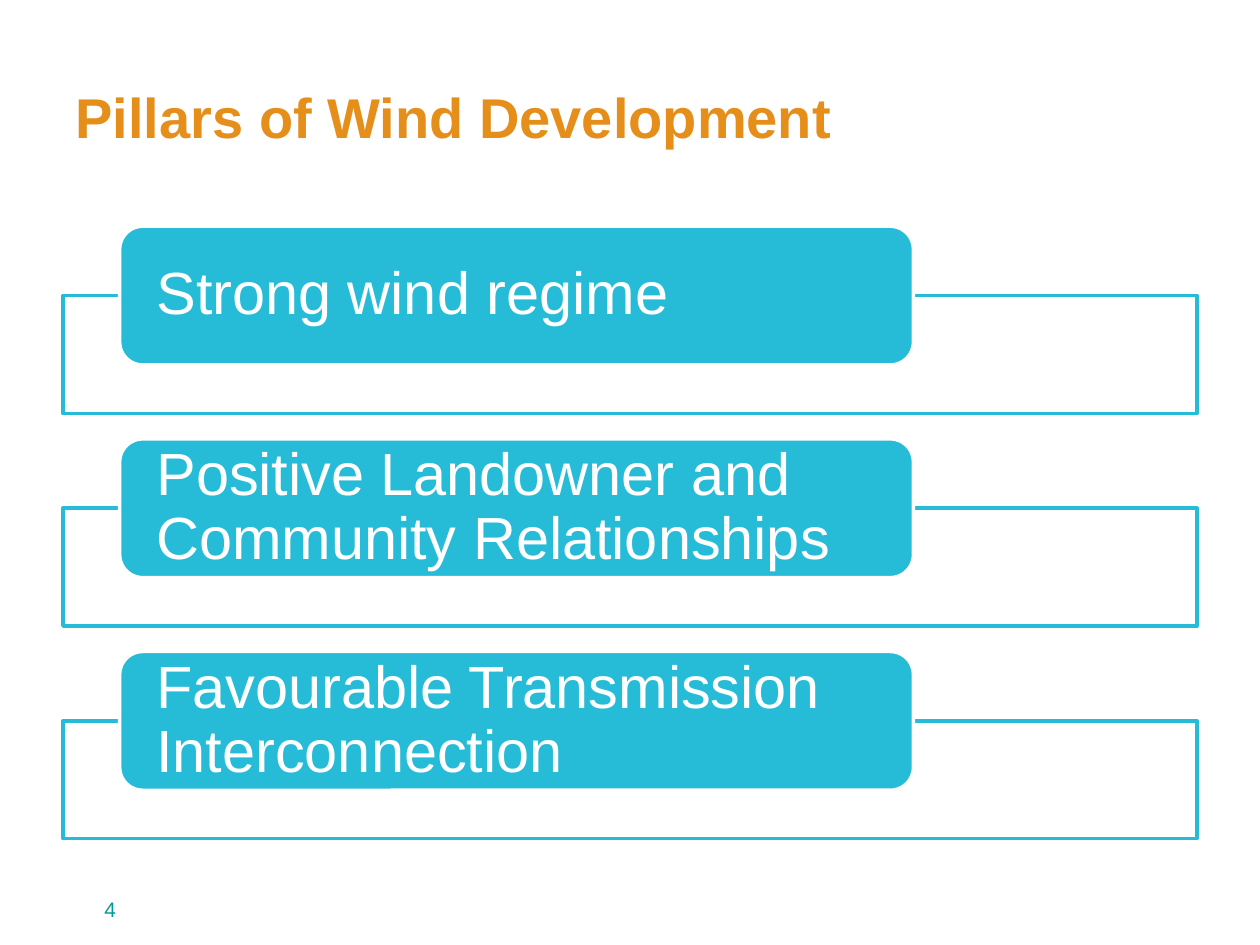
from dataclasses import dataclass

from lxml import etree
from pptx import Presentation
from pptx.dml.color import RGBColor
from pptx.enum import shapes, text
from pptx.oxml import ns
from pptx.util import Pt


@dataclass(frozen=True)
class Theme:
    font: str = "Arial"
    title: str = "E58E1A"
    accent: str = "26BCD7"
    light: str = "FFFFFF"
    number: str = "009999"
    title_size: int = 32
    pillar_size: int = 34
    number_size: int = 12
    line: int = 2


THEME = Theme()
PILLARS = [
    "Strong wind regime",
    "Positive Landowner and Community Relationships",
    "Favourable Transmission Interconnection",
]


def add_run(p, words, size, color, bold=False):
    r = p.add_run()
    r.text = words
    r.font.name = THEME.font
    r.font.size = Pt(size)
    r.font.bold = bold
    r.font.color.rgb = RGBColor.from_string(color)


def add_box(s, kind, box, fill, line):
    sp = s.shapes.add_shape(kind, *map(Pt, box))
    sp.shadow.inherit = False
    sp.fill.solid()
    sp.fill.fore_color.rgb = RGBColor.from_string(fill)
    sp.line.color.rgb = RGBColor.from_string(line)
    sp.line.width = Pt(THEME.line)
    return sp


def add_title(s, box, words):
    sp = s.shapes.title
    sp.left, sp.top, sp.width, sp.height = map(Pt, box)
    tf = sp.text_frame
    tf.vertical_anchor = text.MSO_ANCHOR.MIDDLE
    p = tf.paragraphs[0]
    p.alignment = text.PP_ALIGN.LEFT
    add_run(p, words, THEME.title_size, THEME.title, bold=True)


def add_pillar(s, box, words):
    left, top, width, height = box
    label_height = 79.3
    frame_top = label_height / 2
    frame = add_box(s, shapes.MSO_SHAPE.RECTANGLE,
                    (left, top + frame_top, width, height - frame_top),
                    THEME.light, THEME.accent)
    color = frame.fill._xPr.find(".//" + ns.qn("a:srgbClr"))
    etree.SubElement(color, ns.qn("a:alpha"), val="90000")

    label = add_box(s, shapes.MSO_SHAPE.ROUNDED_RECTANGLE,
                    (left + width * 0.05, top, width * 0.7, label_height),
                    THEME.accent, THEME.light)
    tf = label.text_frame
    tf.word_wrap = True
    tf.vertical_anchor = text.MSO_ANCHOR.MIDDLE
    tf.margin_left = tf.margin_right = Pt(17.15)
    tf.margin_top = tf.margin_bottom = 0
    p = tf.paragraphs[0]
    p.alignment = text.PP_ALIGN.LEFT
    p.line_spacing = 0.9
    add_run(p, words, THEME.pillar_size, THEME.light)


def add_pillars(s, box, items):
    left, top, width, height = box
    gap = 14.5
    item_height = (height - gap * (len(items) - 1)) / len(items)
    for i, words in enumerate(items):
        y = top + i * (item_height + gap)
        add_pillar(s, (left, y, width, item_height), words)


def add_number(s, box, words):
    tf = s.shapes.add_textbox(*map(Pt, box)).text_frame
    tf.word_wrap = True
    add_run(tf.paragraphs[0], words, THEME.number_size, THEME.number)


def main():
    prs = Presentation()
    prs.slide_width, prs.slide_height = Pt(720), Pt(540)
    s = prs.slides.add_slide(prs.slide_layouts[5])
    add_title(s, (36, 21.6, 648, 90), "Pillars of Wind Development")
    add_pillars(s, (36, 129.3, 648, 350), PILLARS)
    add_number(s, (52.5, 509, 168, 28.8), "4")
    prs.save("out.pptx")


if __name__ == "__main__":
    main()
